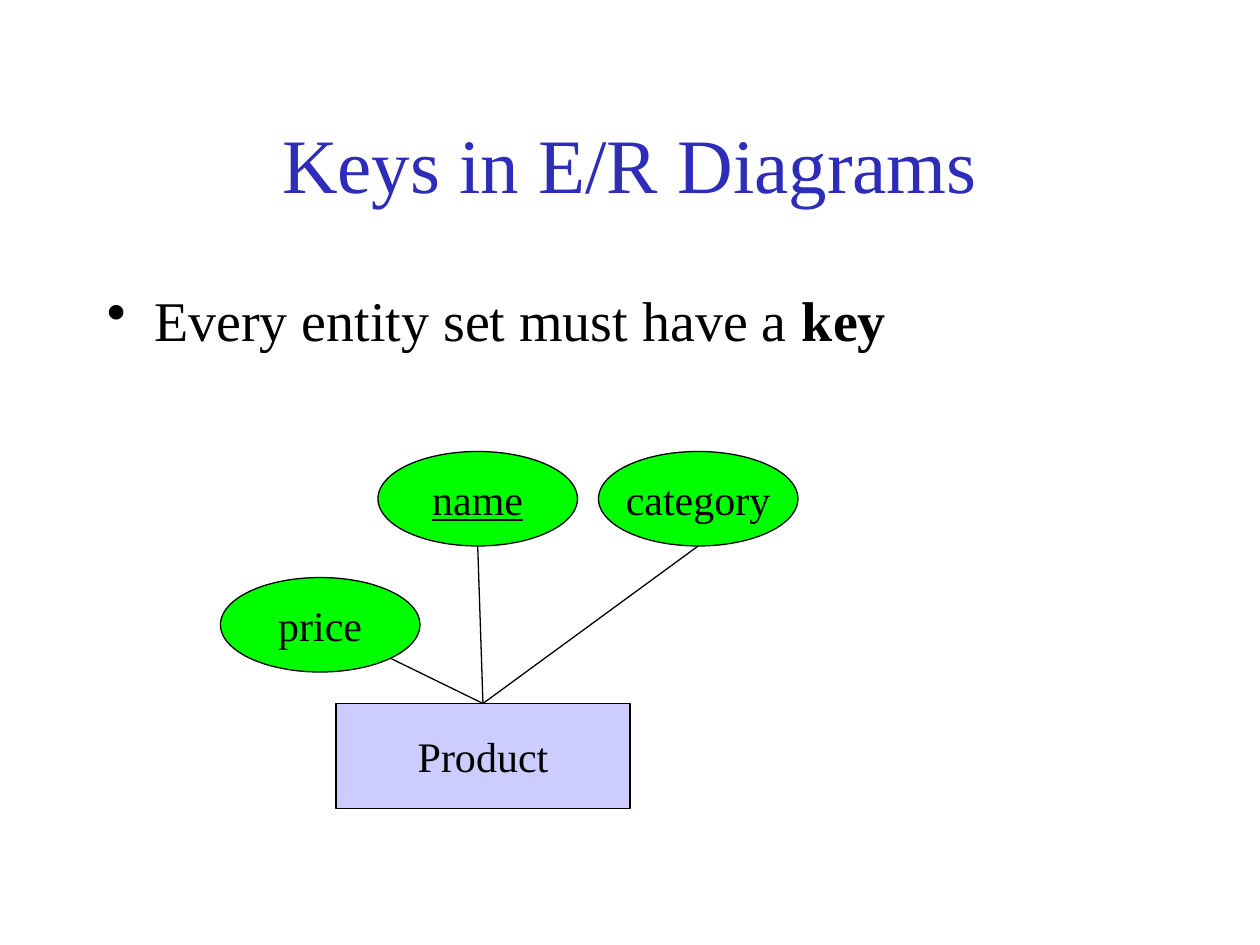
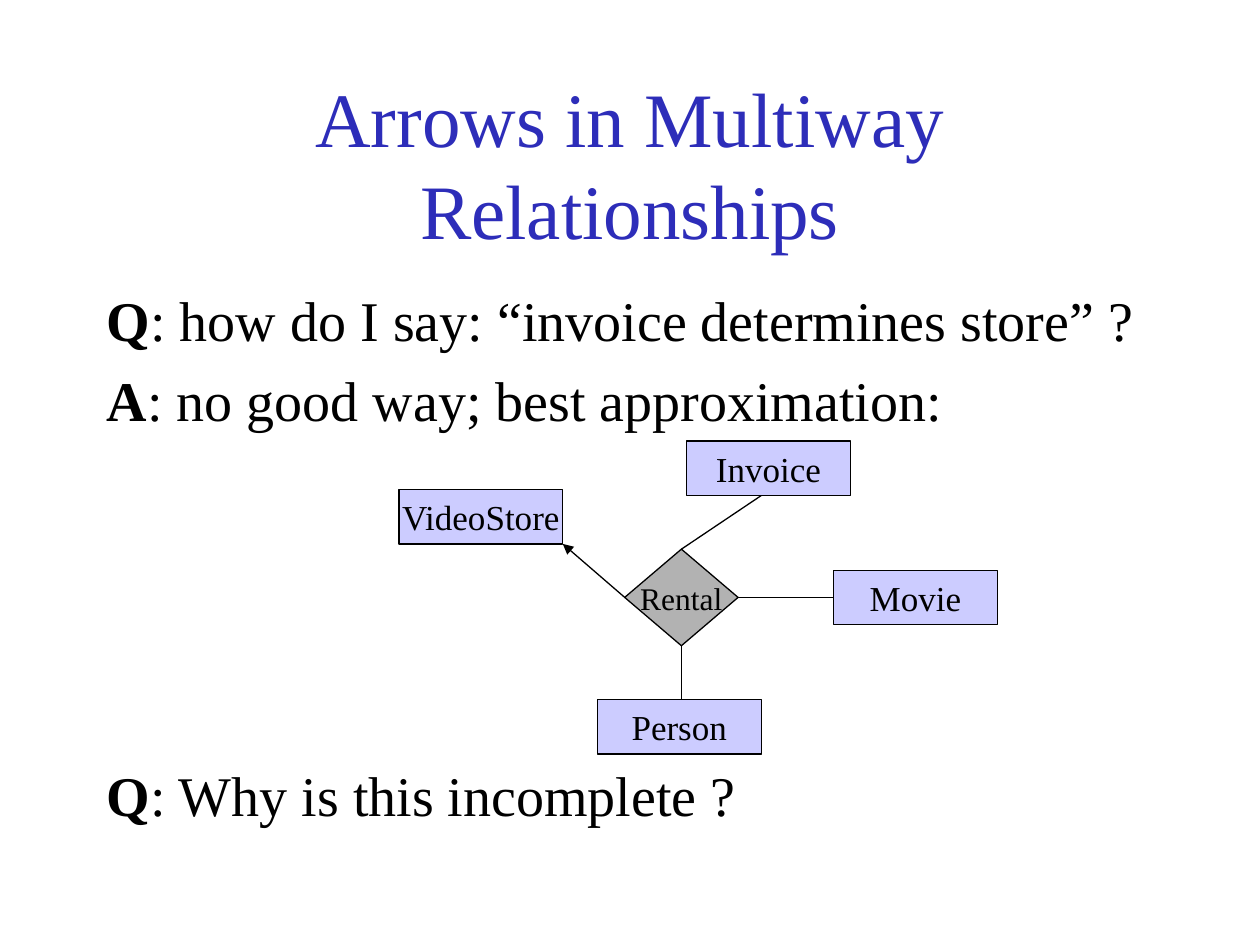
from dataclasses import dataclass
from typing import Optional

from lxml.etree import SubElement
from pptx import Presentation
from pptx.dml.color import RGBColor
from pptx.enum.shapes import MSO_CONNECTOR, MSO_SHAPE
from pptx.enum.text import MSO_ANCHOR, PP_ALIGN
from pptx.oxml.ns import qn
from pptx.util import Pt

EMU_PER_PX = 7620
FONT = "Times New Roman"
COLORS = {
    "title": "2D2DB9",
    "ink": "000000",
    "entity": "CCCCFF",
    "attribute": "00FF00",
    "relationship": "B2B2B2",
}
TOP, LEFT, BOTTOM, RIGHT = range(4)


@dataclass(frozen=True)
class Kind:
    """Look shared by all nodes of one sort."""

    geometry: MSO_SHAPE
    color: str
    width: int
    height: int
    size: int


@dataclass(frozen=True)
class Node:
    """A labelled shape of the diagram."""

    label: str
    kind: Kind
    left: int
    top: int
    underline: bool = False


@dataclass(frozen=True)
class Link:
    """A line from a side of a node to a point or to a side of another node."""

    source: str
    side: int
    end: tuple[int, int]
    target: Optional[str] = None
    target_side: int = LEFT
    arrow: bool = False


@dataclass(frozen=True)
class Line:
    """A body paragraph made of (text, bold) pieces."""

    pieces: list[tuple[str, bool]]
    space_before: float = 0
    bullet: bool = False


@dataclass(frozen=True)
class Page:
    """The whole content of a slide."""

    title: str
    body_width: int
    lines: list[Line]
    nodes: list[Node]
    links: list[Link]


ATTRIBUTE = Kind(MSO_SHAPE.OVAL, "attribute", 190, 90, 24)
LARGE_ENTITY = Kind(MSO_SHAPE.RECTANGLE, "entity", 280, 100, 24)
ENTITY = Kind(MSO_SHAPE.RECTANGLE, "entity", 156, 52, 20)
RELATIONSHIP = Kind(MSO_SHAPE.DIAMOND, "relationship", 108, 92, 18)

PAGES = [
    Page(
        "Keys in E/R Diagrams",
        1020,
        [Line([("Every entity set must have a ", False), ("key", True)], bullet=True)],
        [
            Node("Product", LARGE_ENTITY, 320, 670),
            Node("name", ATTRIBUTE, 360, 430, underline=True),
            Node("category", ATTRIBUTE, 570, 430),
            Node("price", ATTRIBUTE, 210, 550),
        ],
        [Link("Product", TOP, end) for end in [(372, 627), (455, 520), (665, 520)]],
    ),
    Page(
        "Arrows in Multiway Relationships",
        1070,
        [
            Line([("Q", True), (": how do I say: “invoice determines store” ?", False)]),
            Line([("A", True), (": no good way; best approximation:", False)], 7.5),
            Line([("Q", True), (": Why is this incomplete ?", False)], 187),
        ],
        [
            Node("Rental", RELATIONSHIP, 595, 523),
            Node("VideoStore", ENTITY, 380, 466),
            Node("Person", ENTITY, 569, 666),
            Node("Movie", ENTITY, 794, 543),
            Node("Invoice", ENTITY, 654, 420),
        ],
        [
            Link("Rental", RIGHT, (794, 569), target="Movie"),
            Link("Rental", BOTTOM, (649, 666)),
            Link("Rental", TOP, (725, 472)),
            Link("Rental", LEFT, (536, 518), arrow=True),
        ],
    ),
]


def px(*lengths: int) -> list[int]:
    """Turn pixels into EMU."""
    return [length * EMU_PER_PX for length in lengths]


def rgb(name: str) -> RGBColor:
    """Look up a named colour."""
    return RGBColor.from_string(COLORS[name])


def style(paragraph, size: int, color: str = "ink") -> None:
    """Set the font of a paragraph."""
    font = paragraph.font
    font.name, font.size = FONT, Pt(size)
    font.color.rgb = rgb(color)


def add_title(slide, text: str) -> None:
    """Draw the centred slide title."""
    frame = slide.shapes.add_textbox(*px(90, 80, 1020, 150)).text_frame
    frame.word_wrap = True
    frame.vertical_anchor = MSO_ANCHOR.MIDDLE
    paragraph = frame.paragraphs[0]
    paragraph.text = text
    paragraph.alignment = PP_ALIGN.CENTER
    style(paragraph, 44, "title")


def add_body(slide, width: int, lines: list[Line]) -> None:
    """Draw the body text with its hanging indent."""
    frame = slide.shapes.add_textbox(*px(90, 260, width, 540)).text_frame
    frame.word_wrap = True
    frame.margin_top = px(12)[0]
    for index, line in enumerate(lines):
        paragraph = frame.add_paragraph() if index else frame.paragraphs[0]
        indent = px(45)[0]
        properties = paragraph._p.get_or_add_pPr()
        properties.set("marL", str(indent))
        properties.set("indent", str(-indent))
        if line.bullet:
            SubElement(properties, qn("a:buChar"), char="•")
        if line.space_before:
            paragraph.space_before = Pt(line.space_before)
        for text, bold in line.pieces:
            run = paragraph.add_run()
            run.text = text
            run.font.bold = bold
        style(paragraph, 32)


def add_node(slide, node: Node):
    """Draw a node and return its shape."""
    kind = node.kind
    box = px(node.left, node.top, kind.width, kind.height)
    shape = slide.shapes.add_shape(kind.geometry, *box)
    shape.shadow.inherit = False
    shape.fill.solid()
    shape.fill.fore_color.rgb = rgb(kind.color)
    shape.line.color.rgb = rgb("ink")
    shape.line.width = Pt(0.75)
    frame = shape.text_frame
    frame.word_wrap = False
    frame.vertical_anchor = MSO_ANCHOR.MIDDLE
    paragraph = frame.paragraphs[0]
    paragraph.text = node.label
    paragraph.alignment = PP_ALIGN.CENTER
    style(paragraph, kind.size)
    if node.underline:
        paragraph.font.underline = True
    return shape


def add_link(slide, link: Link, shapes: dict) -> None:
    """Draw a link, joined to the nodes it names."""
    end = px(*link.end)
    connector = slide.shapes.add_connector(MSO_CONNECTOR.STRAIGHT, *end, *end)
    connector.begin_connect(shapes[link.source], link.side)
    if link.target:
        connector.end_connect(shapes[link.target], link.target_side)
    connector.line.color.rgb = rgb("ink")
    connector.line.width = Pt(0.75)
    if link.arrow:
        SubElement(connector.line._get_or_add_ln(), qn("a:tailEnd"), type="triangle")
    SubElement(connector._element.spPr, qn("a:effectLst"))


def main() -> None:
    """Build and save the presentation."""
    presentation = Presentation()
    presentation.slide_width, presentation.slide_height = px(1200, 900)
    for page in PAGES:
        slide = presentation.slides.add_slide(presentation.slide_layouts[6])
        add_title(slide, page.title)
        add_body(slide, page.body_width, page.lines)
        shapes = {node.label: add_node(slide, node) for node in page.nodes}
        for link in page.links:
            add_link(slide, link, shapes)
    presentation.save("out.pptx")


if __name__ == "__main__":
    main()
